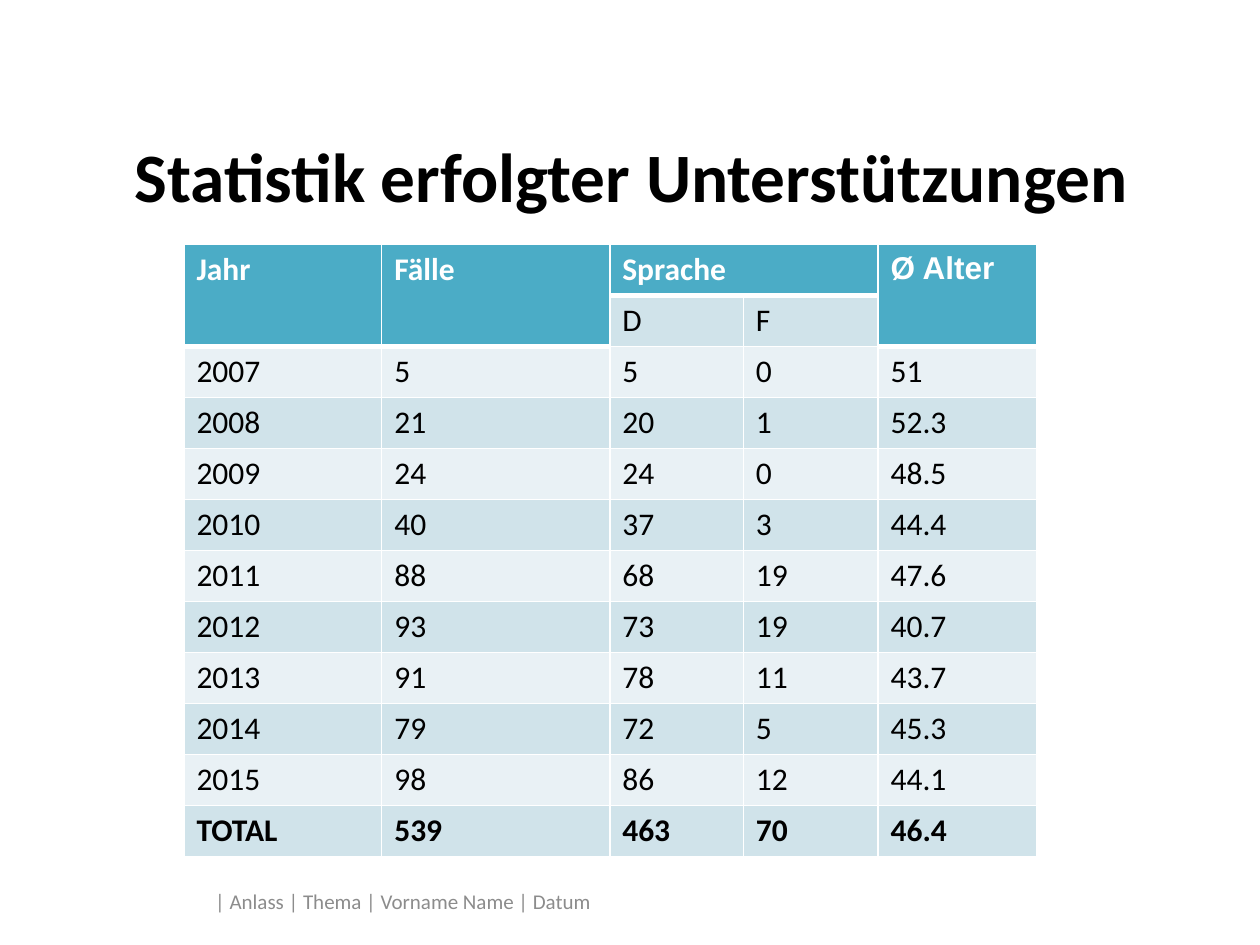
from dataclasses import dataclass
from typing import Any

from lxml import etree
from pptx import Presentation
from pptx.dml.color import RGBColor
from pptx.enum.text import MSO_ANCHOR, PP_ALIGN
from pptx.oxml.ns import qn
from pptx.util import Inches, Pt

MIDDLE = MSO_ANCHOR.MIDDLE
LEFT, CENTER = PP_ALIGN.LEFT, PP_ALIGN.CENTER

BLACK = RGBColor(0x00, 0x00, 0x00)
WHITE = RGBColor(0xFF, 0xFF, 0xFF)
GREY = RGBColor(0x8C, 0x8C, 0x8C)
TEAL = RGBColor(0x4B, 0xAC, 0xC6)
BANDS = (RGBColor(0xE9, 0xF1, 0xF5), RGBColor(0xD0, 0xE3, 0xEA))

WIDTH, HEIGHT = Inches(10), Inches(7.5)
COL, ROW = WIDTH / 100, HEIGHT / 75

BODY = {"name": "Calibri", "size": Pt(18), "bold": False}
HEAD = BODY | {"bold": True}

WIDTHS = (15.7, 18.1, 10.6, 10.7, 12.6)
DATA = (
    ("Jahr", "Fälle", "Sprache", "", "Ø Alter"),
    ("", "", "D", "F", ""),
    ("2007", "5", "5", "0", "51"),
    ("2008", "21", "20", "1", "52.3"),
    ("2009", "24", "24", "0", "48.5"),
    ("2010", "40", "37", "3", "44.4"),
    ("2011", "88", "68", "19", "47.6"),
    ("2012", "93", "73", "19", "40.7"),
    ("2013", "91", "78", "11", "43.7"),
    ("2014", "79", "72", "5", "45.3"),
    ("2015", "98", "86", "12", "44.1"),
    ("TOTAL", "539", "463", "70", "46.4"),
)
MERGES = (((0, 0), (1, 0)), ((0, 1), (1, 1)), ((0, 2), (0, 3)), ((0, 4), (1, 4)))


@dataclass
class Box:
    left: float
    top: float
    width: float
    height: float

    def place(self) -> tuple[int, int, int, int]:
        return (int(self.left * COL), int(self.top * ROW),
                int(self.width * COL), int(self.height * ROW))


@dataclass
class Label:
    box: Box
    text: str
    align: Any
    color: RGBColor
    style: dict[str, Any]


LABELS = (
    Label(Box(5.1, 10.7, 90, 6.3), "Statistik erfolgter Unterstützungen",
          CENTER, BLACK, HEAD | {"size": Pt(39.6)}),
    Label(Box(16.1, 69.5, 49.7, 4), "| Anlass | Thema | Vorname Name | Datum",
          LEFT, GREY, BODY | {"size": Pt(12)}),
)
TABLE = Box(14.6, 19.4, sum(WIDTHS), 48.6)


def set_font(font: Any, style: dict[str, Any], color: RGBColor) -> None:
    for key, value in style.items():
        setattr(font, key, value)
    font.color.rgb = color


def draw_label(slide: Any, label: Label) -> None:
    frame = slide.shapes.add_textbox(*label.box.place()).text_frame
    frame.word_wrap = True
    frame.vertical_anchor = MIDDLE
    para = frame.paragraphs[0]
    para.alignment = label.align
    run = para.add_run()
    run.text = label.text
    set_font(run.font, label.style, label.color)


def draw_edges(cell: Any, widths: dict[str, int]) -> None:
    props = cell._tc.get_or_add_tcPr()
    for side, width in widths.items():
        line = etree.SubElement(props, qn(f"a:ln{side}"), w=str(Pt(width)))
        fill = etree.SubElement(line, qn("a:solidFill"))
        etree.SubElement(fill, qn("a:srgbClr"), val=str(WHITE))


def draw_cell(cell: Any, row: int, col: int) -> None:
    head = row == 0 or (row == 1 and col not in (2, 3))
    under = row == 1 and col in (2, 3)
    draw_edges(cell, {"L": 1, "R": 1, "T": 3 if under else 1, "B": 3 if head else 1})
    cell.fill.solid()
    cell.fill.fore_color.rgb = TEAL if head else BANDS[row % 2]
    text = DATA[row][col]
    if text:
        style = HEAD if head or row == len(DATA) - 1 else BODY
        if head and col == 4:
            style = style | {"name": "Arial"}
        run = cell.text_frame.paragraphs[0].add_run()
        run.text = text
        set_font(run.font, style, WHITE if head else BLACK)
    else:
        cell.text_frame.paragraphs[0].font.size = Pt(18)


def draw_table(slide: Any) -> None:
    table = slide.shapes.add_table(len(DATA), len(WIDTHS), *TABLE.place()).table
    for col, width in zip(table.columns, WIDTHS):
        col.width = int(width * COL)
    for row in table.rows:
        row.height = int(TABLE.height * ROW / len(DATA))
    for first, last in MERGES:
        table.cell(*first).merge(table.cell(*last))
    for row in range(len(DATA)):
        for col in range(len(WIDTHS)):
            draw_cell(table.cell(row, col), row, col)


def main() -> None:
    deck = Presentation()
    deck.slide_width, deck.slide_height = WIDTH, HEIGHT
    slide = deck.slides.add_slide(deck.slide_layouts[6])
    title, footer = LABELS
    draw_label(slide, title)
    draw_table(slide)
    draw_label(slide, footer)
    deck.save("out.pptx")


if __name__ == "__main__":
    main()
